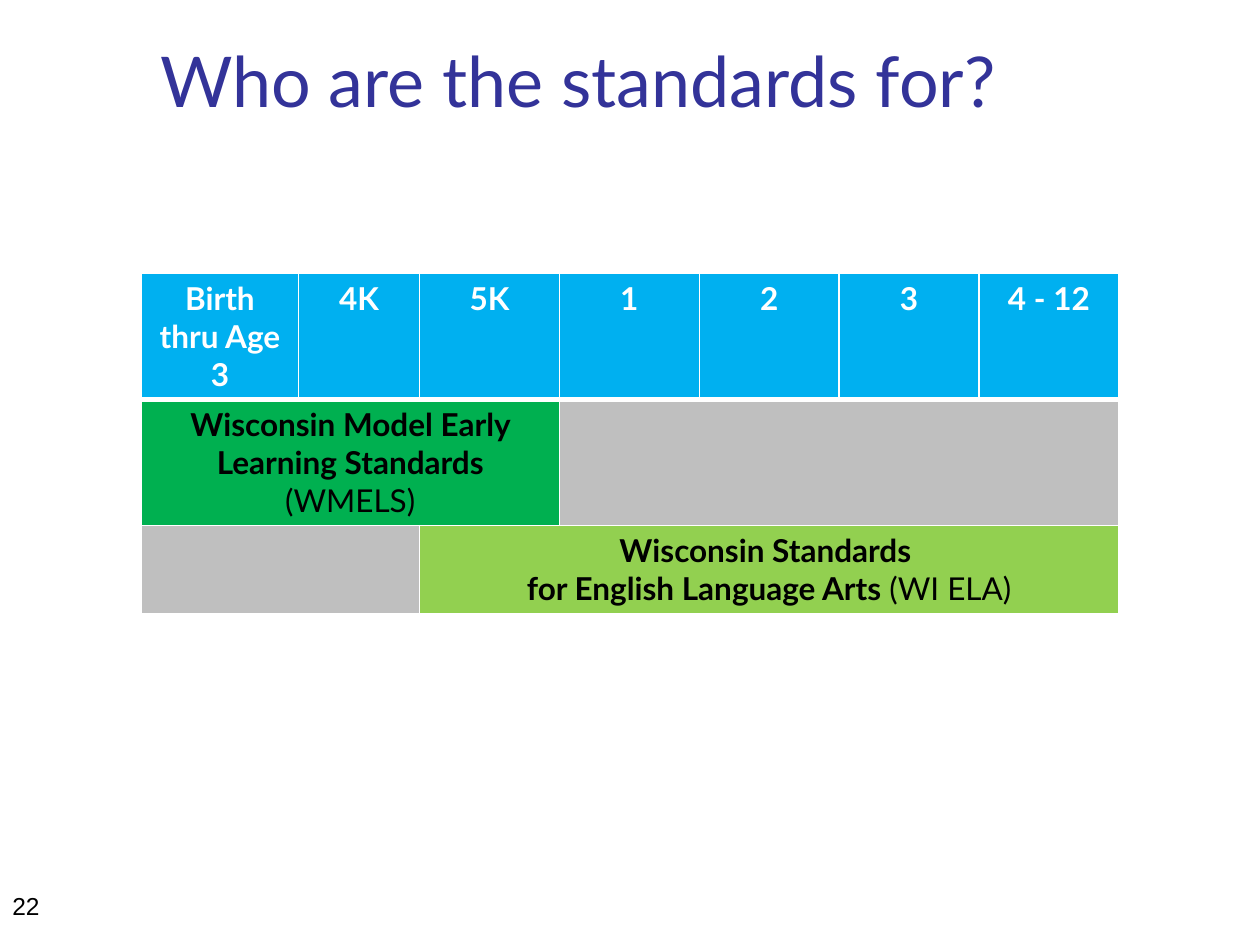
from dataclasses import dataclass

from lxml.etree import SubElement
from pptx import Presentation
from pptx.dml.color import RGBColor as Rgb
from pptx.enum.text import MSO_ANCHOR as Anchor, MSO_AUTO_SIZE as AutoSize, PP_ALIGN as Align
from pptx.oxml.ns import qn
from pptx.util import Inches, Pt


@dataclass(frozen=True)
class Theme:
    heading_font: str = "Lato"
    number_font: str = "Arial"
    title_size: int = 40
    table_size: int = 18
    number_size: int = 14
    title: str = "333399"
    white: str = "FFFFFF"
    black: str = "000000"
    grades: str = "00B0F0"
    early: str = "00B050"
    arts: str = "92D050"
    unused: str = "BFBFBF"


class SlideBuilder:
    """Adds styled elements to one slide."""

    def __init__(self, slide, theme):
        self.slide = slide
        self.theme = theme

    def style(self, font, name, size, color):
        font.name, font.size = name, Pt(size)
        font.color.rgb = Rgb.from_string(color)

    def title(self, wording, left, top, width, height):
        title = self.slide.shapes.title
        title.left, title.top = Inches(left), Inches(top)
        title.width, title.height = Inches(width), Inches(height)
        frame = title.text_frame
        frame.text = wording
        frame.auto_size = AutoSize.NONE
        frame.vertical_anchor = Anchor.TOP
        heading = frame.paragraphs[0]
        heading.alignment = Align.LEFT
        self.style(heading.font, self.theme.heading_font, self.theme.title_size, self.theme.title)

    def page_number(self, number, left, top, width, height):
        box = self.slide.shapes.add_textbox(Inches(left), Inches(top), Inches(width), Inches(height))
        box.text_frame.word_wrap = True
        line = box.text_frame.paragraphs[0]
        line.text = number
        self.style(line.font, self.theme.number_font, self.theme.number_size, self.theme.black)

    def table(self, left, top, widths, row_height, row_count):
        frame = self.slide.shapes.add_table(
            row_count, len(widths), Inches(left), Inches(top),
            Inches(sum(widths)), Inches(row_height * row_count))
        table = frame.table
        for column, width in zip(table.columns, widths):
            column.width = Inches(width)
        for index, row in enumerate(table.rows):
            row.height = Inches(row_height)
            for cell in row.cells:
                self.borders(cell, top=3 if index == 1 else 1, bottom=3 if index == 0 else 1)
        return table

    def borders(self, cell, top, bottom):
        properties = cell._tc.get_or_add_tcPr()
        for side, width in (("L", 1), ("R", 1), ("T", top), ("B", bottom)):
            line = SubElement(properties, qn(f"a:ln{side}"), w=str(Pt(width)))
            fill = SubElement(line, qn("a:solidFill"))
            SubElement(fill, qn("a:srgbClr"), val=self.theme.white)

    def band(self, table, row, first, last, fill, lines=(), color=None):
        cell = table.cell(row, first)
        if last > first:
            cell.merge(table.cell(row, last))
        cell.fill.solid()
        cell.fill.fore_color.rgb = Rgb.from_string(fill)
        frame = cell.text_frame
        for index, runs in enumerate(lines):
            line = frame.add_paragraph() if index else frame.paragraphs[0]
            line.alignment = Align.CENTER
            self.style(line.font, self.theme.heading_font, self.theme.table_size, color)
            for wording, bold in runs:
                run = line.add_run()
                run.text = wording
                run.font.bold = bold


def main():
    theme = Theme()
    deck = Presentation()
    deck.slide_width, deck.slide_height = Inches(10), Inches(7.5)
    builder = SlideBuilder(deck.slides.add_slide(deck.slide_layouts[5]), theme)

    builder.title("Who are the standards for?", 1.17, 0.25, 7.67, 1.25)

    grades = ["Birth thru Age 3", "4K", "5K", "1", "2", "3", "4 - 12"]
    standards = builder.table(1.12, 2.17, [1.25, 0.96] + [1.11] * 5, 0.69, 3)
    for column, grade in enumerate(grades):
        builder.band(standards, 0, column, column, theme.grades, [[(grade, True)]], theme.white)

    early_lines = [[("Wisconsin Model Early Learning Standards ", True), ("(WMELS)", False)]]
    arts_lines = [[("Wisconsin Standards ", True)],
                  [("for English Language Arts", True), (" (WI ELA)", False)]]
    builder.band(standards, 1, 0, 2, theme.early, early_lines, theme.black)
    builder.band(standards, 1, 3, 6, theme.unused)
    builder.band(standards, 2, 0, 1, theme.unused)
    builder.band(standards, 2, 2, 6, theme.arts, arts_lines, theme.black)

    builder.page_number("22", 0, 7.02, 2.33, 0.4)
    deck.save("out.pptx")


if __name__ == "__main__":
    main()
